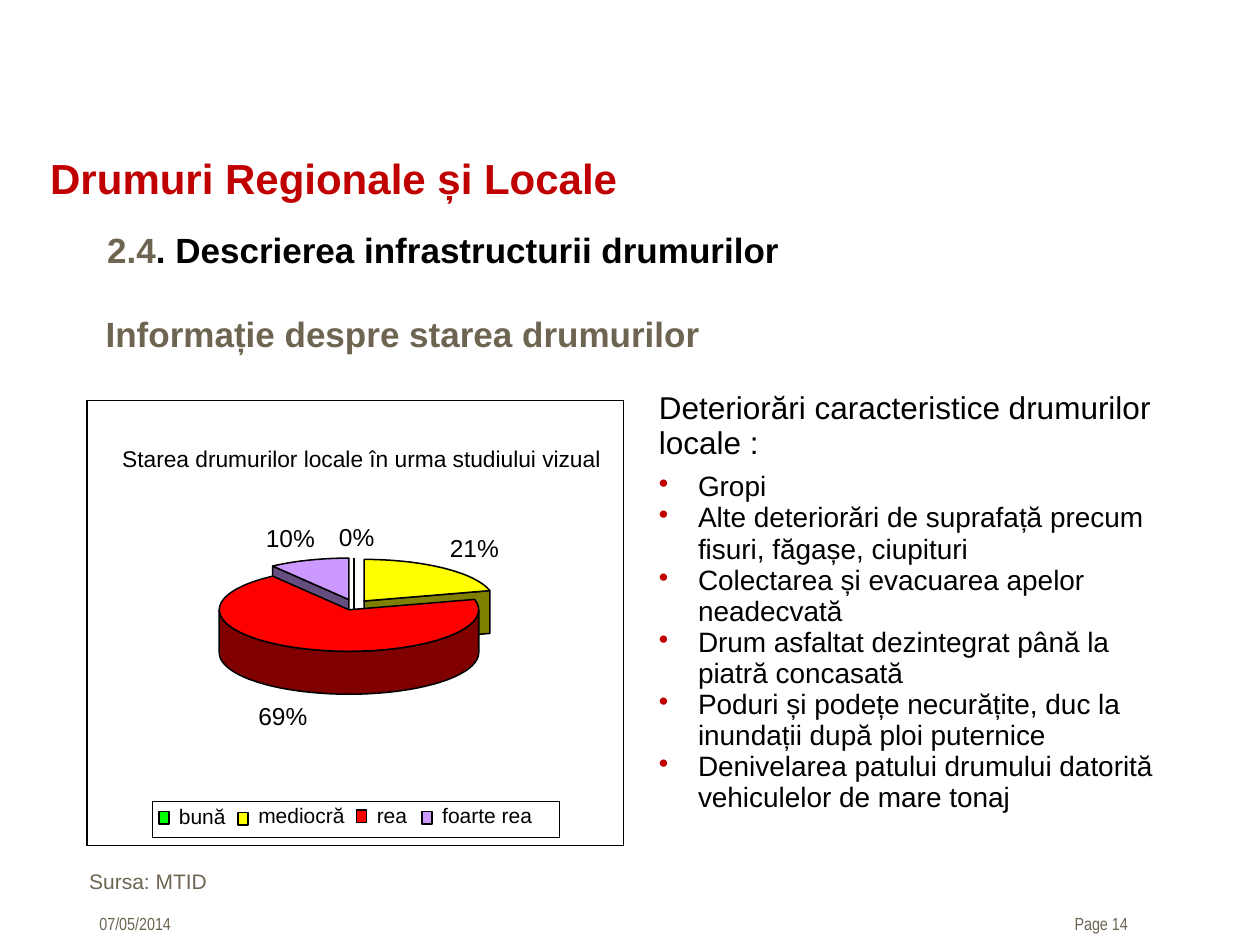
from math import cos, radians, sin

from lxml.etree import SubElement
from pptx import Presentation
from pptx.dml.color import RGBColor
from pptx.enum.shapes import MSO_CONNECTOR, MSO_SHAPE
from pptx.enum.text import MSO_ANCHOR, MSO_AUTO_SIZE, PP_ALIGN
from pptx.oxml.ns import qn
from pptx.util import Inches, Pt

BLACK = RGBColor(0x00, 0x00, 0x00)
WHITE = RGBColor(0xFF, 0xFF, 0xFF)
TAUPE = RGBColor(0x6E, 0x64, 0x52)
CRIMSON = RGBColor(0xC0, 0x00, 0x00)
GREEN = RGBColor(0x00, 0xFF, 0x00)
YELLOW = RGBColor(0xFF, 0xFF, 0x00)
DARK_YELLOW = RGBColor(0x80, 0x80, 0x00)
RED = RGBColor(0xFF, 0x00, 0x00)
DARK_RED = RGBColor(0x80, 0x00, 0x00)
LILAC = RGBColor(0xCC, 0x99, 0xFF)
DARK_LILAC = RGBColor(0x66, 0x4D, 0x80)

RADIUS_X, RADIUS_Y, DEPTH = 1.03, 0.33, 0.34
OUTLINE = Pt(0.88)
HAIRLINE = Pt(0)


def add_text(shapes, box, text, size, color, bold=False, font="Arial", inset=None, wrap=True):
    shape = shapes.add_textbox(*(Inches(value) for value in box))
    frame = shape.text_frame
    frame.word_wrap = wrap
    if inset is not None:
        frame.margin_left = frame.margin_right = Inches(inset)
        frame.margin_top = frame.margin_bottom = Inches(inset)
    frame.text = text
    run_font = frame.paragraphs[0].runs[0].font
    run_font.name, run_font.size, run_font.bold = font, Pt(size), bold
    run_font.color.rgb = color


def paint(shape, fill, width):
    shape.shadow.inherit = False
    shape.fill.solid()
    shape.fill.fore_color.rgb = fill
    shape.line.color.rgb = BLACK
    shape.line.width = width


presentation = Presentation()
presentation.slide_width = Inches(10)
presentation.slide_height = Inches(7.5)
slide = presentation.slides.add_slide(presentation.slide_layouts[5])

title = slide.shapes.title
title.left, title.top = Inches(0.75), Inches(1.76)
title.width, title.height = Inches(8.5), Inches(0.68)
title_frame = title.text_frame
title_frame.auto_size = MSO_AUTO_SIZE.NONE
title_frame.vertical_anchor = MSO_ANCHOR.TOP
title_paragraph = title_frame.paragraphs[0]
title_paragraph.alignment = PP_ALIGN.LEFT
for text, color in (("2.4", TAUPE), (". Descrierea infrastructurii drumurilor", BLACK)):
    run = title_paragraph.add_run()
    run.text = text
    run.font.name, run.font.size, run.font.bold = "Arial", Pt(20), True
    run.font.color.rgb = color

add_text(slide.shapes, (8.43, 7.2, 1.01, 0.27), "Page 14", 10, TAUPE, font="Arial Narrow")
add_text(slide.shapes, (0.69, 7.2, 1.42, 0.27), "07/05/2014", 10, TAUPE, font="Arial Narrow")
add_text(slide.shapes, (0.74, 2.43, 8.5, 0.5), "Informație despre starea drumurilor", 20, TAUPE, bold=True)
add_text(slide.shapes, (0.3, 1.16, 9.04, 0.71), "Drumuri Regionale și Locale", 24, CRIMSON, bold=True)

table_frame = slide.shapes.add_table(1, 1, Inches(5.13), Inches(3.05), Inches(4.21), Inches(3.72))
table = table_frame.table
table.first_row = table.horz_banding = False
cell = table.cell(0, 0)
cell.fill.background()
damage_lines = [
    "Deteriorări caracteristice drumurilor locale :",
    "Gropi",
    "Alte deteriorări de suprafață precum fisuri, făgașe, ciupituri",
    "Colectarea și evacuarea apelor neadecvată",
    "Drum asfaltat dezintegrat până la piatră concasată",
    "Poduri și podețe necurățite, duc la inundații după ploi puternice",
    "Denivelarea patului drumului datorită vehiculelor de mare tonaj",
]
cell.text_frame.text = "\n".join(damage_lines)
for index, paragraph in enumerate(cell.text_frame.paragraphs):
    if index > 0:
        properties = paragraph._p.get_or_add_pPr()
        properties.set("marL", str(Inches(0.31)))
        properties.set("indent", str(-Inches(0.31)))
        bullet_color = SubElement(properties, qn("a:buClr"))
        SubElement(bullet_color, qn("a:srgbClr")).set("val", str(CRIMSON))
        SubElement(properties, qn("a:buChar")).set("char", "•")
    if index == 1:
        paragraph.space_before = Pt(6)
    run_font = paragraph.runs[0].font
    run_font.name, run_font.bold = "Arial", False
    run_font.size = Pt(16 if index else 18)
    run_font.color.rgb = BLACK

add_text(slide.shapes, (0.61, 6.84, 2.12, 0.45), "Sursa: MTID", 12, TAUPE)

pie = slide.shapes.add_group_shape().shapes
panel = pie.add_shape(MSO_SHAPE.RECTANGLE, Inches(0.69), Inches(3.18), Inches(4.26), Inches(3.53))
paint(panel, WHITE, HAIRLINE)

empty_slice = pie.add_connector(
    MSO_CONNECTOR.STRAIGHT, Inches(2.81), Inches(4.43), Inches(2.81), Inches(5.09))
empty_slice.line.color.rgb = BLACK
empty_slice.line.width = OUTLINE
SubElement(empty_slice._element.spPr, qn("a:effectLst"))

slices = [
    ((2.77, 4.76), 0.90, 1.00, LILAC, DARK_LILAC, "start"),
    ((2.89, 4.77), 0.00, 0.21, YELLOW, DARK_YELLOW, "end"),
    ((2.77, 4.84), 0.21, 0.90, RED, DARK_RED, "rim"),
]
steps = 40
for center, start, end, top_color, side_color, side in slices:
    center_x, center_y = center
    angles = [radians(360 * (start + (end - start) * step / steps) - 90) for step in range(steps + 1)]
    front_angles = [radians(180 * step / steps) for step in range(steps + 1)]
    arc, front = (
        [(center_x + RADIUS_X * cos(angle), center_y + RADIUS_Y * sin(angle)) for angle in sweep]
        for sweep in (angles, front_angles)
    )
    edge = {"start": [center, arc[0]], "end": [center, arc[-1]], "rim": front}[side]
    wall = edge + [(x, y + DEPTH) for x, y in reversed(edge)]
    for outline, color in ((wall, side_color), ([center] + arc, top_color)):
        points = [(Inches(x), Inches(y)) for x, y in outline]
        builder = pie.build_freeform(*points[0])
        builder.add_line_segments(points[1:], close=True)
        paint(builder.convert_to_shape(), color, OUTLINE)

add_text(pie, (0.97, 3.53, 3.85, 0.23), "Starea drumurilor locale în urma studiului vizual",
         13, BLACK, inset=0, wrap=False)
for text, left, top, width in (
    ("0%", 2.69, 4.14, 0.35),
    ("21%", 3.57, 4.23, 0.46),
    ("69%", 2.05, 5.56, 0.46),
    ("10%", 2.11, 4.15, 0.46),
):
    add_text(pie, (left, top, width, 0.31), text, 14, BLACK, inset=0, wrap=False)

legend = pie.add_shape(MSO_SHAPE.RECTANGLE, Inches(1.21), Inches(6.36), Inches(3.23), Inches(0.29))
paint(legend, WHITE, HAIRLINE)
for text, color, left, key_top, text_top, width in (
    ("bună", GREEN, 1.26, 6.44, 6.38, 0.45),
    ("mediocră", YELLOW, 1.89, 6.45, 6.37, 0.78),
    ("rea", RED, 2.83, 6.43, 6.37, 0.32),
    ("foarte rea", LILAC, 3.35, 6.44, 6.37, 0.91),
):
    key = pie.add_shape(MSO_SHAPE.RECTANGLE, Inches(left), Inches(key_top), Inches(0.08), Inches(0.1))
    paint(key, color, OUTLINE)
    add_text(pie, (left + 0.16, text_top, width, 0.2), text, 12, BLACK, inset=0)

presentation.save("out.pptx")
